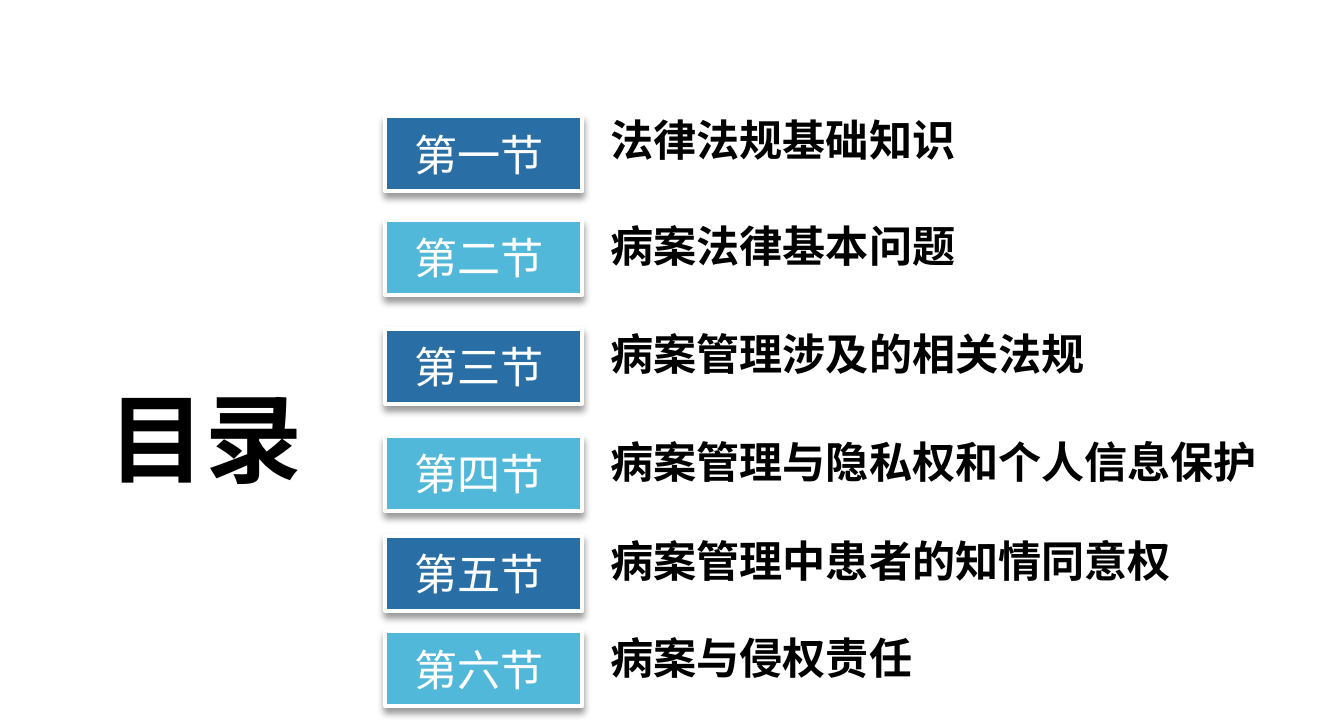
from lxml.etree import SubElement
from pptx import Presentation
from pptx.dml.color import RGBColor as Color
from pptx.enum.shapes import MSO_SHAPE as Shape
from pptx.enum.text import MSO_ANCHOR as Anchor, MSO_AUTO_SIZE as AutoSize, PP_ALIGN as Align
from pptx.oxml.ns import qn
from pptx.util import Emu, Pt

EMU_PER_PX = 9144  # 100 px to the inch
COLORS = {"dark": "296FA5", "light": "52B8DA", "white": "FFFFFF", "black": "000000"}
CJK_FONT, LATIN_FONT = "Noto Sans CJK SC", "Times New Roman"

LABEL_LEFT, LABEL_WIDTH, LABEL_HEIGHT = 298, 152, 58
HEADING_LEFT, HEADING_HEIGHT = 462, 50

# Label, label top, heading, heading top, heading width
SECTIONS = [
    ("第一节 ", 90, "法律法规基础知识", 83, 330),
    ("第二节 ", 170, "病案法律基本问题", 165, 330),
    ("第三节 ", 254, "病案管理涉及的相关法规", 248, 402),
    ("第四节 ", 337, "病案管理与隐私权和个人信息保护", 332, 524),
    ("第五节 ", 414, "病案管理中患者的知情同意权", 408, 524),
    ("第六节 ", 488, "病案与侵权责任", 483, 524),
]


def px(*lengths):
    return [Emu(length * EMU_PER_PX) for length in lengths]


def color(name):
    return Color.from_string(COLORS[name])


def add_run(paragraph, text, size, color_name, font_name=LATIN_FONT, bold=False):
    run = paragraph.add_run()
    run.text = text
    font = run.font
    font.name, font.size, font.bold = font_name, Pt(size), bold
    font.color.rgb = color(color_name)
    SubElement(font._element, qn("a:ea"), typeface=CJK_FONT)


def add_soft_shadow(shape):
    shape.shadow.inherit = False
    effects = shape._element.spPr.find(qn("a:effectLst"))
    shadow = SubElement(effects, qn("a:outerShdw"), blurRad=str(Pt(4)), dist=str(Pt(3)),
                        dir="5400000", algn="t", rotWithShape="0")
    shade = SubElement(shadow, qn("a:srgbClr"), val=COLORS["black"])
    SubElement(shade, qn("a:alpha"), val="40000")


def add_text(slide, text, box, size, font_name=LATIN_FONT, wrap=True):
    frame = slide.shapes.add_textbox(*px(*box)).text_frame
    frame.word_wrap = wrap
    frame.auto_size = AutoSize.SHAPE_TO_FIT_TEXT
    add_run(frame.paragraphs[0], text, size, "black", font_name, bold=True)


def add_label(slide, text, top, fill_name):
    shape = slide.shapes.add_shape(
        Shape.RECTANGLE, *px(LABEL_LEFT, top, LABEL_WIDTH, LABEL_HEIGHT))
    shape.fill.solid()
    shape.fill.fore_color.rgb = color(fill_name)
    shape.line.color.rgb = color("white")
    shape.line.width = Pt(2.25)
    add_soft_shadow(shape)
    frame = shape.text_frame
    frame.word_wrap = True
    frame.vertical_anchor = Anchor.MIDDLE
    paragraph = frame.paragraphs[0]
    paragraph.alignment = Align.CENTER
    add_run(paragraph, text, 24, "white")


def main():
    presentation = Presentation()
    presentation.slide_width, presentation.slide_height = px(1039, 562)
    slide = presentation.slides.add_slide(presentation.slide_layouts[6])

    # Contents title
    add_text(slide, "目录", (74, 288, 179, 101), 54, CJK_FONT, wrap=False)

    # Section labels in alternating blues, each with its heading
    for index, (label, label_top, heading, heading_top, width) in enumerate(SECTIONS):
        add_label(slide, label, label_top, "light" if index % 2 else "dark")
        add_text(slide, heading, (HEADING_LEFT, heading_top, width, HEADING_HEIGHT), 24)

    presentation.save("out.pptx")


if __name__ == "__main__":
    main()
